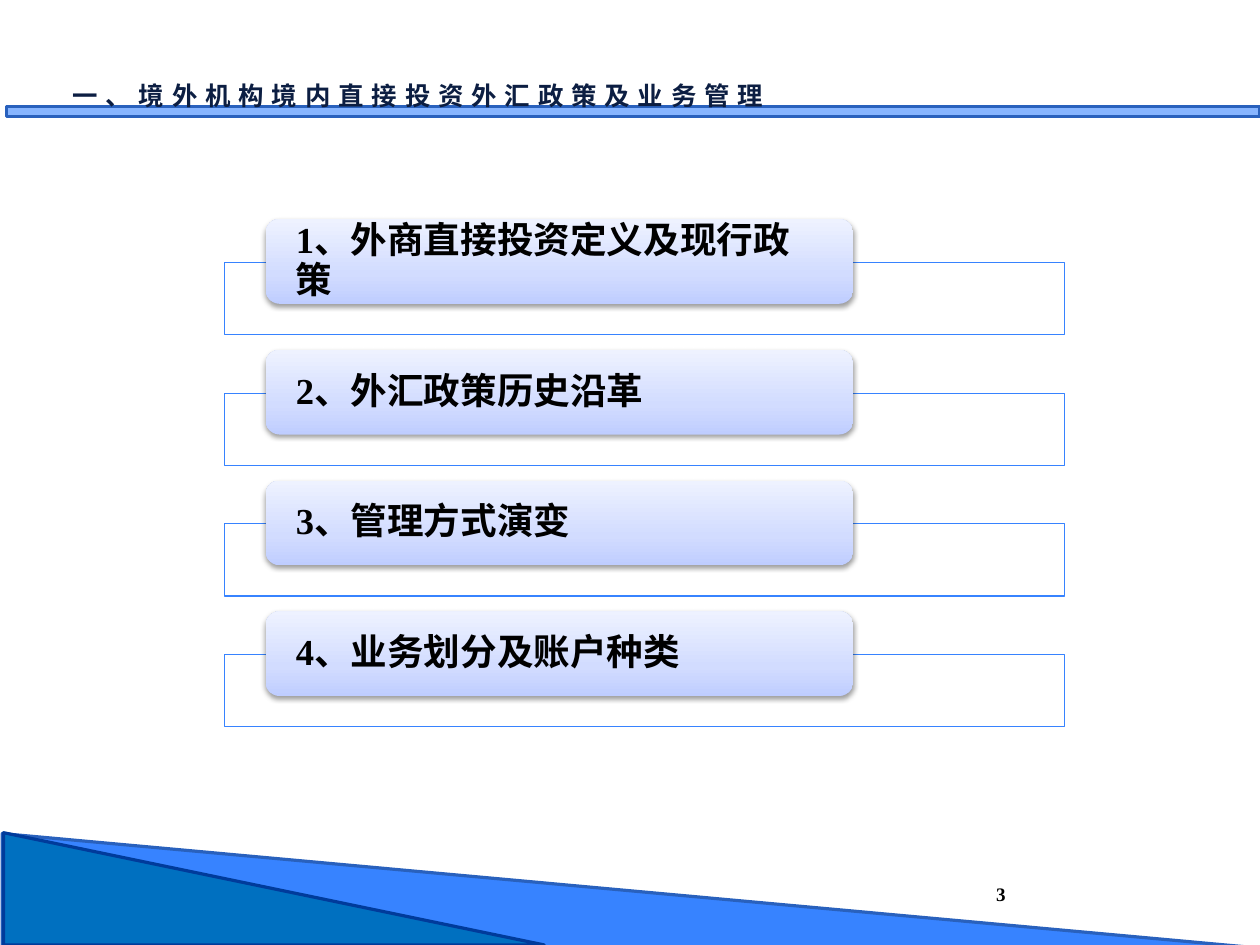
from lxml.etree import SubElement
from pptx import Presentation
from pptx.dml.color import RGBColor
from pptx.enum.shapes import MSO_SHAPE
from pptx.enum.text import MSO_ANCHOR, MSO_AUTO_SIZE, PP_ALIGN
from pptx.oxml import parse_xml
from pptx.oxml.ns import nsdecls, qn
from pptx.util import Cm, Pt

TITLE = "一、境外机构境内直接投资外汇政策及业务管理"
TOPICS = ["1、外商直接投资定义及现行政策", "2、外汇政策历史沿革",
          "3、管理方式演变", "4、业务划分及账户种类"]
PAGE = "3"
DECOR = [
    (MSO_SHAPE.RIGHT_TRIANGLE, (0.05, 18.49, 27.89, 2.54), "3783FF", "2961BD"),
    (MSO_SHAPE.RIGHT_TRIANGLE, (0.08, 18.47, 11.99, 2.49), "0070C0", "003B9B"),
    (MSO_SHAPE.RECTANGLE, (0.15, 2.36, 27.79, 0.23), "87B5FF", "2961BD"),
]
STOPS = [(0, "BFCDFF"), (35, "D2DCFF"), (100, "EEF2FF")]
PITCH = 2.9
CJK, SERIF = "Noto Sans CJK SC", "Times New Roman"


def color(value):
    return RGBColor.from_string(value)


def add_shape(kind, box, fill=None, line=None, width=2):
    sp = s.shapes.add_shape(kind, *map(Cm, box))
    sp.shadow.inherit = False
    if fill:
        sp.fill.solid()
        sp.fill.fore_color.rgb = color(fill)
    if line:
        sp.line.color.rgb = color(line)
        sp.line.width = Pt(width)
    else:
        sp.line.fill.background()
    return sp


def write(sp, text, size, font, hue, align, frame):
    tf = sp.text_frame
    for name, value in frame.items():
        setattr(tf, name, value)
    p = tf.paragraphs[0]
    p.alignment = align
    r = p.add_run()
    r.text = text
    for name, value in dict(size=Pt(size), bold=True, name=font).items():
        setattr(r.font, name, value)
    r.font.color.rgb = color(hue)
    SubElement(r.font._element, qn("a:ea"), typeface=CJK)
    return p, r


def style_pill(sp):
    stops = "".join(f'<a:gs pos="{pos * 1000}"><a:srgbClr val="{c}"/></a:gs>'
                    for pos, c in STOPS)
    grad = parse_xml(f'<a:gradFill {nsdecls("a")}><a:gsLst>{stops}</a:gsLst>'
                     '<a:lin ang="16200000" scaled="0"/></a:gradFill>')
    props = sp._element.spPr
    props.find(qn("a:prstGeom")).addnext(grad)
    props.find(qn("a:effectLst")).append(parse_xml(
        f'<a:outerShdw {nsdecls("a")} blurRad="{Pt(3.1)}" dist="{Pt(1.6)}" '
        'dir="5400000" rotWithShape="0"><a:srgbClr val="000000">'
        '<a:alpha val="38000"/></a:srgbClr></a:outerShdw>'))


prs = Presentation()
prs.slide_width, prs.slide_height = Cm(27.94), Cm(20.96)
s = prs.slides.add_slide(prs.slide_layouts[5])

for decor in DECOR:
    add_shape(*decor)

title = s.shapes.title
s.shapes._spTree.append(title._element)
title.left, title.top, title.width, title.height = map(Cm, (1.35, 1.65, 16.23, 0.94))
p, r = write(title, TITLE, 16, CJK, "0C1E42", PP_ALIGN.LEFT,
             dict(word_wrap=False, vertical_anchor=MSO_ANCHOR.TOP,
                  auto_size=MSO_AUTO_SIZE.SHAPE_TO_FIT_TEXT))
r.font._element.set("spc", "500")

for i, topic in enumerate(TOPICS):
    frame = add_shape(MSO_SHAPE.RECTANGLE, (4.98, 5.82 + i * PITCH, 18.62, 1.6),
                      "FFFFFF", "3783FF", 0.75)
    white = frame._element.spPr.find(qn("a:solidFill"))[0]
    SubElement(white, qn("a:alpha"), val="90000")
    pill = add_shape(MSO_SHAPE.ROUNDED_RECTANGLE, (5.89, 4.86 + i * PITCH, 13.03, 1.88))
    style_pill(pill)
    p, r = write(pill, topic, 23, SERIF, "000000", PP_ALIGN.LEFT,
                 dict(word_wrap=True, vertical_anchor=MSO_ANCHOR.MIDDLE,
                      margin_left=Cm(0.58), margin_right=Cm(0.58),
                      margin_top=0, margin_bottom=0))
    p.line_spacing = 0.9

number = s.shapes.add_textbox(*map(Cm, (21.16, 19.02, 1.14, 1.07)))
write(number, PAGE, 12, SERIF, "000000", PP_ALIGN.RIGHT,
      dict(word_wrap=True, vertical_anchor=MSO_ANCHOR.BOTTOM,
           margin_left=0, margin_right=0, margin_top=0, margin_bottom=0))

prs.save("out.pptx")
